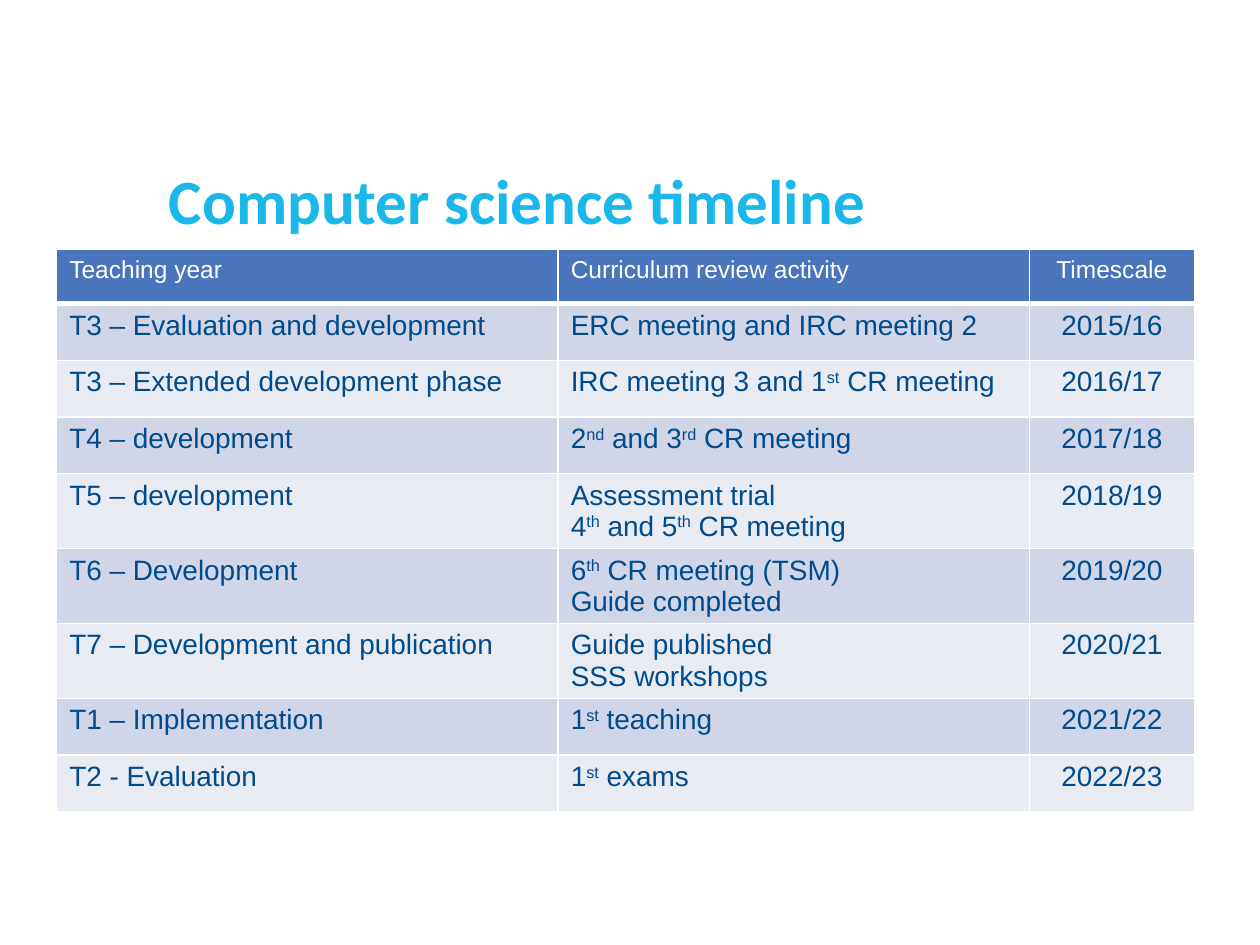
from dataclasses import dataclass

from lxml.etree import SubElement
from pptx import Presentation
from pptx.dml.color import RGBColor
from pptx.enum.text import MSO_ANCHOR, PP_ALIGN
from pptx.oxml.ns import qn
from pptx.util import Inches, Pt

TITLE = "Computer science timeline"
HEADER = ("Teaching year", "Curriculum review activity", "Timescale")
# Lines are separated by a newline; text between carets is superscript.
ROWS = [
    ("T3 – Evaluation and development", "ERC meeting and IRC meeting 2", "2015/16"),
    ("T3 – Extended development phase", "IRC meeting 3 and 1^st^ CR meeting", "2016/17"),
    ("T4 – development", "2^nd^ and 3^rd^ CR meeting", "2017/18"),
    ("T5 – development", "Assessment trial\n4^th^ and 5^th^ CR meeting", "2018/19"),
    ("T6 – Development", "6^th^ CR meeting (TSM)\nGuide completed", "2019/20"),
    ("T7 – Development and publication", "Guide published\nSSS workshops", "2020/21"),
    ("T1 – Implementation", "1^st^ teaching", "2021/22"),
    ("T2 - Evaluation", "1^st^ exams", "2022/23"),
]
COLUMN_WIDTHS = (3.98, 3.74, 1.31)
COLUMN_ALIGNMENTS = (PP_ALIGN.LEFT, PP_ALIGN.LEFT, PP_ALIGN.CENTER)
HEADER_HEIGHT, ROW_HEIGHT = 0.43, 0.45


@dataclass(frozen=True)
class Theme:
    title_font: str = "Calibri"
    body_font: str = "Arial"
    title_size: int = 36
    header_size: int = 14
    body_size: int = 16
    title: str = "1AB7EA"
    header_fill: str = "4A74BB"
    header_text: str = "FFFFFF"
    body_text: str = "004B8D"
    border: str = "FFFFFF"
    bands: tuple = ("D0D6E7", "E9EBF3")


THEME = Theme()


def style_font(font, name, size, color, bold=False):
    font.name, font.size, font.bold = name, Pt(size), bold
    font.color.rgb = RGBColor.from_string(color)


def add_title(slide):
    box = slide.shapes.title
    box.left, box.top, box.width, box.height = map(Inches, (1.34, 1.35, 8.16, 1.06))
    frame = box.text_frame
    frame.margin_left = frame.margin_top = frame.margin_right = frame.margin_bottom = 0
    frame.vertical_anchor = MSO_ANCHOR.TOP
    frame.word_wrap = True
    para = frame.paragraphs[0]
    para.alignment = PP_ALIGN.LEFT
    para.line_spacing = 0.9
    span = para.add_run()
    span.text = TITLE
    style_font(span.font, THEME.title_font, THEME.title_size, THEME.title, bold=True)


def add_borders(cell, bottom_width):
    """Border lines must precede the fill in the cell's properties."""
    properties = cell._tc.get_or_add_tcPr()
    for side, width in (("L", 1), ("R", 1), ("T", 1), ("B", bottom_width)):
        line = SubElement(properties, qn(f"a:ln{side}"), w=str(Pt(width)))
        fill = SubElement(line, qn("a:solidFill"))
        SubElement(fill, qn("a:srgbClr"), val=THEME.border)


def write_cell(cell, text, alignment, size, color):
    frame = cell.text_frame
    for line_number, line in enumerate(text.split("\n")):
        para = frame.add_paragraph() if line_number else frame.paragraphs[0]
        para.alignment = alignment
        for part_number, part in enumerate(line.split("^")):
            span = para.add_run()
            span.text = part
            style_font(span.font, THEME.body_font, size, color)
            if part_number % 2:
                span._r.get_or_add_rPr().set("baseline", "30000")


def add_timeline(slide):
    content = [HEADER, *ROWS]
    height = HEADER_HEIGHT + ROW_HEIGHT * len(ROWS)
    table = slide.shapes.add_table(
        len(content), len(HEADER), Inches(0.45), Inches(1.98),
        Inches(sum(COLUMN_WIDTHS)), Inches(height)).table
    table.horz_banding = False
    for column, width in zip(table.columns, COLUMN_WIDTHS):
        column.width = Inches(width)
    for row_number, (row, texts) in enumerate(zip(table.rows, content)):
        if row_number == 0:
            row.height = Inches(HEADER_HEIGHT)
            fill, size, color, bottom = THEME.header_fill, THEME.header_size, THEME.header_text, 3
        else:
            row.height = Inches(ROW_HEIGHT)
            fill, size, color, bottom = (
                THEME.bands[(row_number - 1) % 2], THEME.body_size, THEME.body_text, 1)
        for cell, text, alignment in zip(row.cells, texts, COLUMN_ALIGNMENTS):
            add_borders(cell, bottom)
            cell.fill.solid()
            cell.fill.fore_color.rgb = RGBColor.from_string(fill)
            write_cell(cell, text, alignment, size, color)


def main():
    deck = Presentation()
    deck.slide_width, deck.slide_height = Inches(10), Inches(7.5)
    page = deck.slides.add_slide(deck.slide_layouts.get_by_name("Title Only"))
    add_title(page)
    add_timeline(page)
    deck.save("out.pptx")


if __name__ == "__main__":
    main()
